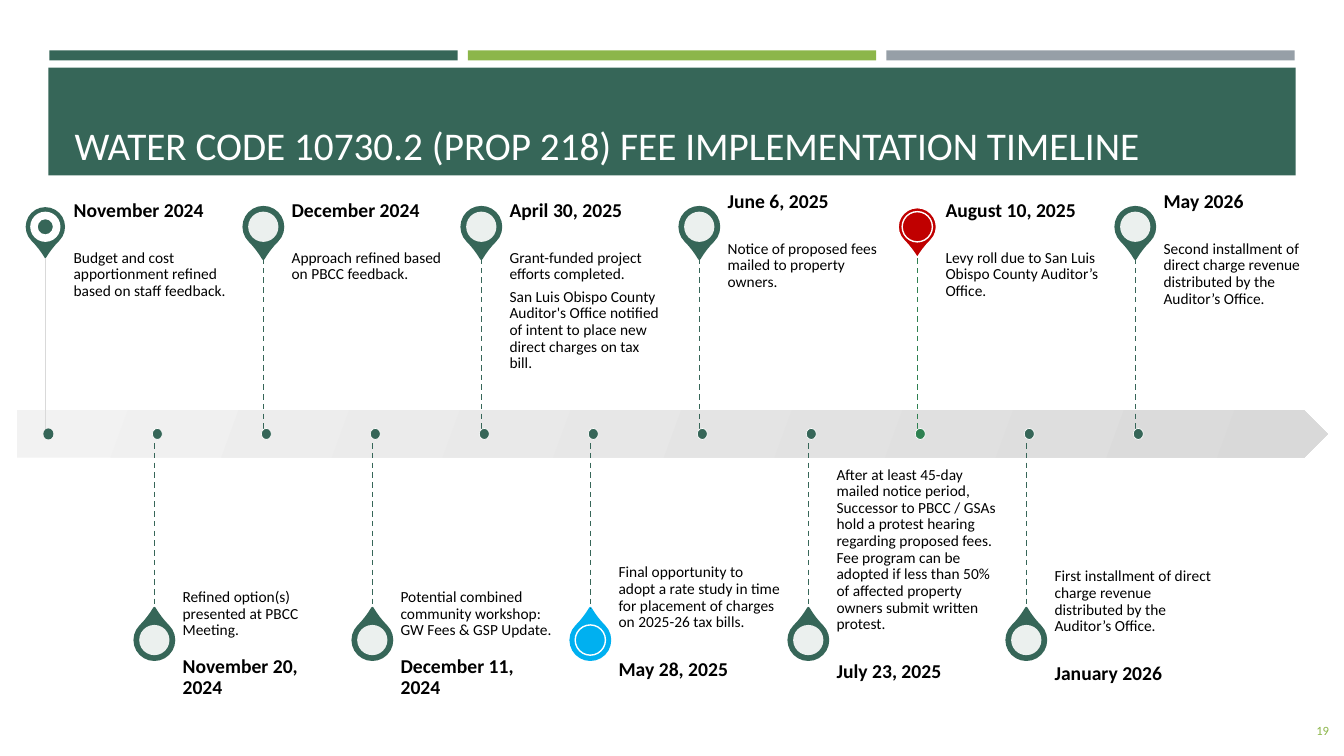
from lxml import etree
from pptx import Presentation
from pptx.dml.color import RGBColor
from pptx.enum.dml import MSO_LINE
from pptx.enum.shapes import MSO_CONNECTOR, MSO_SHAPE as SHAPE
from pptx.enum.text import MSO_ANCHOR as ANCHOR, MSO_AUTO_SIZE, PP_ALIGN
from pptx.oxml.ns import qn
from pptx.util import Inches, Pt

COLORS = {
    "green": "366658", "lime": "8CB64A", "gray": "969FA7", "red": "C00000",
    "blue": "00B0F0", "leaf": "2E8151", "white": "FFFFFF", "black": "000000",
    "pale": "F2F2F2", "silver": "D9D9D9",
}
RGB = {name: RGBColor.from_string(value) for name, value in COLORS.items()}

prs = Presentation()
prs.slide_width, prs.slide_height = Inches(13.33), Inches(7.5)
s = prs.slides.add_slide(prs.slide_layouts[5])


def draw(kind, box, fill, line=None, width=1):
    sp = s.shapes.add_shape(kind, *map(Inches, box))
    sp.shadow.inherit = False
    sp.fill.solid()
    sp.fill.fore_color.rgb = RGB[fill]
    if line:
        sp.line.color.rgb = RGB[line]
        sp.line.width = Pt(width)
    else:
        sp.line.fill.background()
    return sp


def write(sp, box, texts, size, color="black", bold=False, anchor=ANCHOR.MIDDLE,
          insets=(0.1, 0.05, 0.1, 0.05), align=PP_ALIGN.LEFT, spacing=0.9, after=0):
    sp.left, sp.top, sp.width, sp.height = map(Inches, box)
    tf = sp.text_frame
    frame = {"word_wrap": True, "auto_size": MSO_AUTO_SIZE.NONE, "vertical_anchor": anchor}
    for name, value in frame.items():
        setattr(tf, name, value)
    for side, value in zip(("left", "top", "right", "bottom"), insets):
        setattr(tf, f"margin_{side}", Inches(value))
    for i, text in enumerate(texts):
        p = tf.add_paragraph() if i else tf.paragraphs[0]
        r = p.add_run()
        r.text = text
        layout = {"alignment": align, "line_spacing": spacing,
                  "space_before": Pt(0), "space_after": Pt(after)}
        for name, value in layout.items():
            setattr(p, name, value)
        for name, value in {"name": "Calibri", "size": Pt(size), "bold": bold}.items():
            setattr(r.font, name, value)
        r.font.color.rgb = RGB[color]


for i, color in enumerate(("green", "lime", "gray")):
    draw(SHAPE.RECTANGLE, (0.49 + 4.15 * i, 0.5, 4.05, 0.1), color)
draw(SHAPE.RECTANGLE, (0.48, 0.67, 12.37, 1.07), "green")

title = s.shapes.title
s.shapes._spTree.append(title._element)
write(title, (0.64, 0.81, 12.06, 0.92),
      ["WATER CODE 10730.2 (PROP 218) FEE IMPLEMENTATION TIMELINE"], 28, "white",
      anchor=ANCHOR.BOTTOM)
write(s.shapes.add_textbox(0, 0, 0, 0), (12.7, 7.05, 0.58, 0.4), ["19"], 9, "lime",
      align=PP_ALIGN.RIGHT, spacing=1)

arrow = draw(SHAPE.PENTAGON, (0.17, 4.07, 13, 0.47), "pale")
arrow.fill.gradient()
arrow.fill.gradient_angle = 340
for stop, color in zip(arrow.fill.gradient_stops, ("pale", "silver")):
    stop.color.rgb = RGB[color]

milestones = [
    ("November 2024", 0,
     ["Budget and cost apportionment refined based on staff feedback."]),
    ("November 20, 2024", 0, ["Refined option(s) presented at PBCC Meeting."]),
    ("December 2024", 0, ["Approach refined based on PBCC feedback."]),
    ("December 11, 2024", 0,
     ["Potential combined community workshop: GW Fees & GSP Update."]),
    ("April 30, 2025", 0,
     ["Grant-funded project efforts completed.",
      "San Luis Obispo County Auditor's Office notified of intent to place new "
      "direct charges on tax bill."]),
    ("May 28, 2025", -0.08,
     ["Final opportunity to adopt a rate study in time for placement of charges on "
      "2025-26 tax bills."]),
    ("June 6, 2025", -0.09, ["Notice of proposed fees mailed to property owners."]),
    ("July 23, 2025", -0.06,
     ["After at least 45-day mailed notice period, Successor to PBCC / GSAs hold a "
      "protest hearing regarding proposed fees. Fee program can be adopted if less "
      "than 50% of affected property owners submit written protest."]),
    ("August 10, 2025", 0, ["Levy roll due to San Luis Obispo County Auditor’s Office."]),
    ("January 2026", -0.04,
     ["First installment of direct charge revenue distributed by the Auditor’s Office."]),
    ("May 2026", -0.09,
     ["Second installment of direct charge revenue distributed by the Auditor’s Office."]),
]
pin_styles = {
    "November 2024": ("green", None),
    "May 28, 2025": ("blue", "blue"),
    "August 10, 2025": ("red", "white"),
}
first_x, last_x, axis_y = 0.45, 11.26, 4.3
pitch = (last_x - first_x) / (len(milestones) - 1)
pin, hole, text_w, note_h, date_h = 0.39, 0.3, 1.62, 1.74, 0.61

for i, (date, shift, notes) in enumerate(milestones):
    x = first_x + pitch * i
    above = i % 2 == 0
    pin_y = 2.25 if above else 6.35
    fill, outline = pin_styles.get(date, ("green", "green"))

    drop = draw(SHAPE.TEAR, (x - pin / 2, pin_y - pin / 2, pin, pin), fill, outline, 1.75)
    drop.adjustments[0] = 1.15
    drop.rotation = 135 if above else 315

    center = (x - hole / 2, pin_y - hole / 2, hole, hole)
    if i == 0:
        draw(SHAPE.DONUT, center, "white")
    elif fill == "green":
        disc = draw(SHAPE.OVAL, center, "white")
        tint = disc._element.spPr.find(qn("a:solidFill"))[0]
        etree.SubElement(tint, qn("a:alpha"), val="90000")
    else:
        draw(SHAPE.OVAL, center, fill, "white", 1)

    text_x = x + 0.28
    note_y = (2.4 if above else 4.68) + shift
    date_y = note_y - date_h if above else note_y + note_h
    write(s.shapes.add_textbox(0, 0, 0, 0), (text_x, note_y, text_w, note_h), notes, 11,
          anchor=ANCHOR.TOP if above else ANCHOR.BOTTOM,
          insets=(0, 0.08, 0.08, 0.11) if above else (0, 0.11, 0, 0.08), after=4)
    write(s.shapes.add_textbox(0, 0, 0, 0), (text_x, date_y, text_w, date_h), [date], 14,
          bold=True, insets=(0, 0, 0.1, 0), after=5)

    accent = "leaf" if fill == "red" else "green"
    start, end = (2.56, axis_y) if above else (axis_y, 6.04)
    stem = s.shapes.add_connector(MSO_CONNECTOR.STRAIGHT, *map(Inches, (x, start, x, end)))
    stem.line.color.rgb = RGB[accent if i else "silver"]
    stem.line.width = Pt(1 if i else 0.25)
    if i:
        stem.line.dash_style = MSO_LINE.DASH
    etree.SubElement(stem._element.spPr, qn("a:effectLst"))
    draw(SHAPE.OVAL, (x - 0.02, axis_y - 0.05, 0.1, 0.11), accent,
         "white" if i else None, 0.5)

prs.save("out.pptx")
